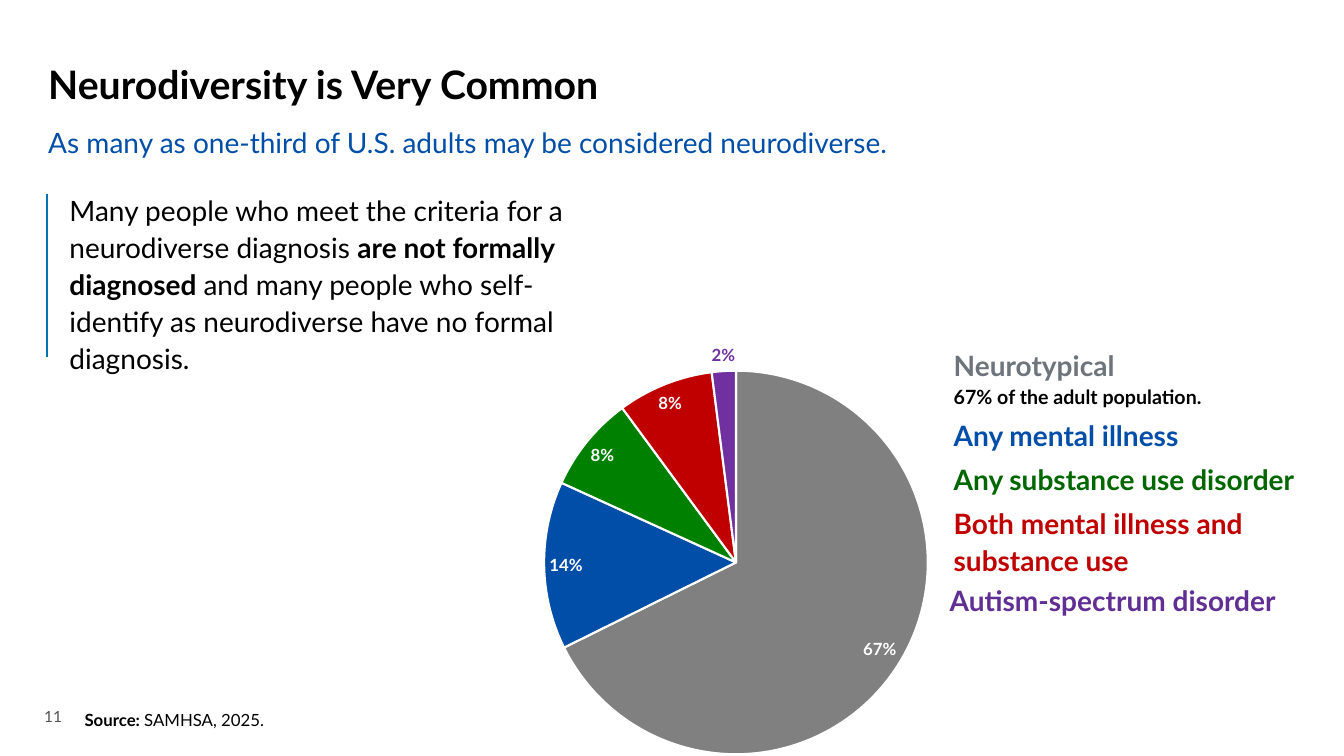
from lxml import etree
from pptx import Presentation
from pptx.chart.data import CategoryChartData
from pptx.dml.color import RGBColor
from pptx.enum.chart import XL_CHART_TYPE as ChartType, XL_LABEL_POSITION as LabelPos
from pptx.enum.shapes import MSO_CONNECTOR as Connector
from pptx.enum.text import MSO_ANCHOR as Anchor
from pptx.oxml import parse_xml
from pptx.oxml.ns import qn
from pptx.util import Inches, Pt

COLORS = {
    "black": "000000", "white": "FFFFFF", "blue": "004EA8", "rule": "0075B2",
    "gray": "6E747C", "green": "006600", "red": "C00000", "purple": "612F93",
    "number": "505050", "slice_gray": "808080", "slice_green": "008000",
    "slice_purple": "7030A0",
}
LEGEND = [  # text, color, size, left, top, width
    ("Neurotypical", "gray", 20, 9.36, 3.38, 2.96),
    ("67% of the adult population.", "black", 14, 9.36, 3.75, 3.79),
    ("Any mental illness", "blue", 20, 9.36, 4.07, 3.98),
    ("Any substance use disorder", "green", 20, 9.36, 4.51, 3.98),
    ("Both mental illness and substance use", "red", 20, 9.36, 4.94, 3.98),
    ("Autism-spectrum disorder", "purple", 20, 9.32, 5.71, 3.79),
]
SLICES = [(0.67, "slice_gray"), (0.14, "blue"), (0.08, "slice_green"),
          (0.08, "red"), (0.02, "slice_purple")]
PIE_AREA = {"x": 0.18, "y": 0.09, "w": 0.63, "h": 0.88}


def rgb(name):
    return RGBColor.from_string(COLORS[name])


def set_font(font, size, color, bold=False, name="Lato"):
    values = {"name": name, "size": Pt(size), "bold": bold}
    for key, value in values.items():
        setattr(font, key, value)
    font.color.rgb = rgb(color)


def add_text(slide, box, runs, size, color="black", spacing=1.1, anchor=Anchor.TOP):
    """Add a one-paragraph text box; runs are (text, bold) pairs."""
    tf = slide.shapes.add_textbox(*map(Inches, box)).text_frame
    tf.word_wrap = True
    tf.vertical_anchor = anchor
    p = tf.paragraphs[0]
    p.line_spacing = spacing
    for text, bold in runs:
        r = p.add_run()
        r.text = text
        set_font(r.font, size, color, bold)


def add_rule(slide, x, top, bottom):
    line = slide.shapes.add_connector(
        Connector.STRAIGHT, Inches(x), Inches(top), Inches(x), Inches(bottom))
    line.line.color.rgb = rgb("rule")
    line.line.width = Pt(1.5)
    etree.SubElement(line._element.spPr, qn("a:effectLst"))


def place_plot(chart):
    """Fix the pie's area as fractions of the chart frame."""
    plot_area = chart._chartSpace.chart.plotArea
    for old in plot_area.findall(qn("c:layout")):
        plot_area.remove(old)
    sizes = "".join(f'<c:{k} val="{v}"/>' for k, v in PIE_AREA.items())
    plot_area.insert(0, parse_xml(
        '<c:layout xmlns:c="http://schemas.openxmlformats.org/drawingml/2006/chart">'
        '<c:manualLayout><c:layoutTarget val="inner"/><c:xMode val="edge"/>'
        f'<c:yMode val="edge"/>{sizes}</c:manualLayout></c:layout>'))


def add_pie(slide, box):
    data = CategoryChartData(number_format="0%")
    data.categories = [str(i) for i in range(1, len(SLICES) + 1)]
    data.add_series("Series 1", [value for value, _ in SLICES])
    chart = slide.shapes.add_chart(ChartType.PIE, *map(Inches, box), data).chart
    chart.has_legend = chart.has_title = False
    set_font(chart.font, 12, "black", True, "Arial")
    place_plot(chart)

    plot = chart.plots[0]
    plot.vary_by_categories = True
    series = plot.series[0]
    labels = series.data_labels
    values = {"show_value": True, "number_format": "0%",
              "number_format_is_linked": False, "position": LabelPos.BEST_FIT}
    for key, value in values.items():
        setattr(labels, key, value)
    set_font(labels.font, 12, "white", True)

    for i, (_, color) in enumerate(SLICES):
        fmt = series.points[i].format
        fmt.fill.solid()
        fmt.fill.fore_color.rgb = rgb(color)
        fmt.line.color.rgb = rgb("white")
        fmt.line.width = Pt(1.5)

    smallest = series.points[len(SLICES) - 1].data_label
    set_font(smallest.font, 12, "slice_purple", True)
    smallest.position = LabelPos.OUTSIDE_END


def main():
    prs = Presentation()
    prs.slide_width, prs.slide_height = Inches(13.33), Inches(7.5)
    s = prs.slides.add_slide(prs.slide_layouts[6])

    add_text(s, (0.38, 0.5, 8.08, 0.6), [("Neurodiversity is Very Common", True)], 28)
    add_text(s, (0.38, 1.16, 12.57, 0.4),
             [("As many as one-third of U.S. adults may be considered neurodiverse.",
               False)], 20, "blue")
    add_text(s, (0.59, 1.84, 5.64, 1.14), [
        ("Many people who meet the criteria for a neurodiverse diagnosis ", False),
        ("are not formally diagnosed ", True),
        ("and many people who self-identify as neurodiverse have no formal diagnosis.",
         False)], 20)
    for text, color, size, left, top, width in LEGEND:
        add_text(s, (left, top, width, 0.44), [(text, True)], size, color)
    add_text(s, (0.34, 6.97, 0.5, 0.28), [("11", False)], 11, "number", 1.0,
             Anchor.BOTTOM)
    add_text(s, (0.74, 6.97, 8.01, 0.29),
             [("Source: ", True), ("SAMHSA, 2025.", False)], 12)
    add_pie(s, (4.31, 3.27, 6.04, 4.36))
    add_rule(s, 0.47, 1.92, 3.54)
    prs.save("out.pptx")


if __name__ == "__main__":
    main()
